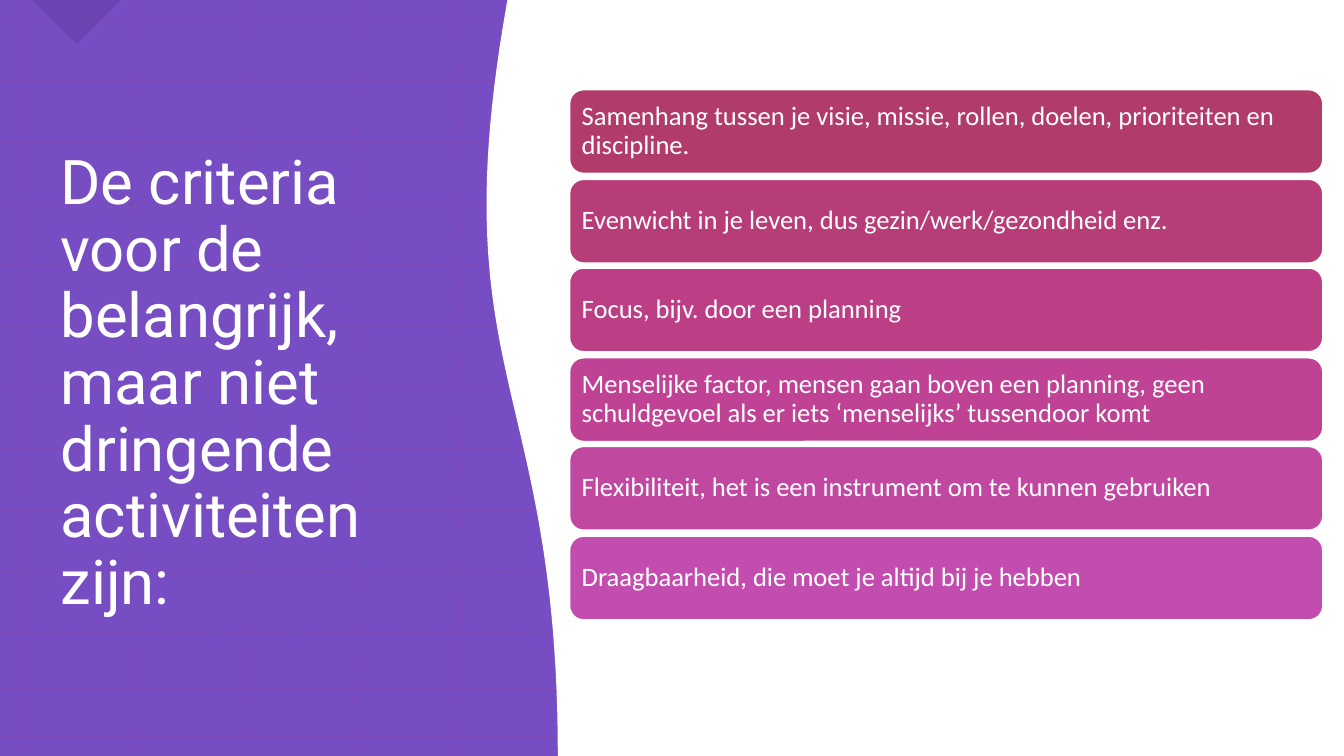
from dataclasses import dataclass
from typing import Any, NamedTuple

from lxml import etree
from pptx import Presentation
from pptx.dml.color import RGBColor
from pptx.enum.dml import MSO_LINE
from pptx.enum.shapes import MSO_CONNECTOR, MSO_SHAPE
from pptx.enum.text import MSO_ANCHOR, MSO_AUTO_SIZE, PP_ALIGN
from pptx.oxml.ns import qn
from pptx.util import Emu, Pt

RECTANGLE, ROUNDED = MSO_SHAPE.RECTANGLE, MSO_SHAPE.ROUNDED_RECTANGLE
RIGHT_TRIANGLE = MSO_SHAPE.RIGHT_TRIANGLE
STRAIGHT = MSO_CONNECTOR.STRAIGHT
DOTTED = MSO_LINE.ROUND_DOT
MIDDLE, LEFT = MSO_ANCHOR.MIDDLE, PP_ALIGN.LEFT
NO_AUTOFIT = MSO_AUTO_SIZE.NONE

EMU_PER_PX = 9144  # 100 px to the inch
SLIDE_W, SLIDE_H = 1333, 750


@dataclass(frozen=True)
class Theme:
    purple: str = "764DC3"
    dark_purple: str = "3A2266"
    grid: str = "B13B6A"
    white: str = "FFFFFF"
    title_font: str = "Roboto"
    body_font: str = "Calibri"
    title_size: int = 44
    body_size: int = 19
    grid_width: float = 1.5
    outline_width: float = 1
    line_spacing: float = 0.9


THEME = Theme()


class Box(NamedTuple):
    left: int
    top: int
    width: int
    height: int


class Point(NamedTuple):
    x: float
    y: float


class GridLine(NamedTuple):
    start: Point
    end: Point


@dataclass(frozen=True)
class Criterion:
    text: str
    fill: str


CRITERIA = [
    Criterion("Samenhang tussen je visie, missie, rollen, doelen, prioriteiten en discipline.", "B13B6A"),
    Criterion("Evenwicht in je leven, dus gezin/werk/gezondheid enz.", "B63D78"),
    Criterion("Focus, bijv. door een planning", "BC3F86"),
    Criterion("Menselijke factor, mensen gaan boven een planning, geen schuldgevoel "
              "als er iets ‘menselijks’ tussendoor komt", "C04294"),
    Criterion("Flexibiliteit, het is een instrument om te kunnen gebruiken", "C148A1"),
    Criterion("Draagbaarheid, die moet je altijd bij je hebben", "C34DAE"),
]
FIRST_CARD = Box(565, 89, 747, 83)
CARD_PITCH = 88.6

COLUMNS = [21 + round(109.3 * i) for i in range(5)]
ROWS = [19 + round(60.9 * i) for i in range(11)] + [683, 731]
GRID = [GridLine(Point(x, 0), Point(x, SLIDE_H)) for x in COLUMNS]
GRID += [GridLine(Point(0, y), Point(SLIDE_W, y)) for y in ROWS]

WAVE_EDGE = [Point(554, 750), Point(554, 376), Point(437, 374), Point(504, 0)]
WAVE_STEPS = 48


def px(length: float) -> Emu:
    return Emu(round(length * EMU_PER_PX))


def rgb(color: str) -> RGBColor:
    return RGBColor.from_string(color)


def apply_format(target: Any, values: dict[str, Any]) -> None:
    for name, value in values.items():
        setattr(target, name, value)


def set_opacity(drawn: Any, percent: int) -> None:
    """Make the first solid colour of a shape or connector translucent."""
    color = next(drawn.element.spPr.iter(qn("a:srgbClr")))
    etree.SubElement(color, qn("a:alpha"), val=str(percent * 1000))


def paint(shape: Any, fill: str, outline: str | None = None) -> None:
    shape.shadow.inherit = False
    shape.fill.solid()
    shape.fill.fore_color.rgb = rgb(fill)
    if outline is None:
        shape.line.fill.background()
    else:
        shape.line.color.rgb = rgb(outline)
        shape.line.width = Pt(THEME.outline_width)


def add_block(shapes: Any, kind: Any, box: Box, fill: str, outline: str | None = None) -> Any:
    block = shapes.add_shape(kind, *map(px, box))
    paint(block, fill, outline)
    return block


def write_text(shape: Any, text: str, font: str, size: int) -> None:
    frame = shape.text_frame
    frame.text = text
    apply_format(frame, {"word_wrap": True, "auto_size": NO_AUTOFIT, "vertical_anchor": MIDDLE})
    paragraph = frame.paragraphs[0]
    apply_format(paragraph, {"alignment": LEFT, "line_spacing": THEME.line_spacing})
    run_font = paragraph.runs[0].font
    apply_format(run_font, {"name": font, "size": Pt(size)})
    run_font.color.rgb = rgb(THEME.white)


def add_grid_line(shapes: Any, grid_line: GridLine) -> None:
    connector = shapes.add_connector(STRAIGHT, *map(px, grid_line.start + grid_line.end))
    connector.line.color.rgb = rgb(THEME.grid)
    apply_format(connector.line, {"width": Pt(THEME.grid_width), "dash_style": DOTTED})
    set_opacity(connector, 20)
    etree.SubElement(connector.element.spPr, qn("a:effectLst"))


def bezier(controls: list[Point], t: float) -> Point:
    u = 1 - t
    weights = (u ** 3, 3 * u * u * t, 3 * u * t * t, t ** 3)
    return Point(sum(w * p.x for w, p in zip(weights, controls)),
                 sum(w * p.y for w, p in zip(weights, controls)))


def add_wave(shapes: Any) -> None:
    """Cover the right side with white, bounded on the left by the curved edge."""
    edge = [bezier(WAVE_EDGE, i / WAVE_STEPS) for i in range(WAVE_STEPS + 1)]
    outline = [(px(p.x), px(p.y)) for p in [Point(SLIDE_W, SLIDE_H), *edge]]
    builder = shapes.build_freeform(px(SLIDE_W), 0)
    builder.add_line_segments(outline, close=True)
    paint(builder.convert_to_shape(), THEME.white, THEME.white)


def place_title(slide: Any) -> None:
    title = slide.shapes.title
    box = Box(50, 79, 408, 605)
    apply_format(title, dict(zip(Box._fields, map(px, box))))
    write_text(title, "De criteria voor de belangrijk, maar niet dringende activiteiten zijn:",
               THEME.title_font, THEME.title_size)
    title.element.getparent().append(title.element)  # in front of the panel


def add_card(shapes: Any, position: int, criterion: Criterion) -> None:
    box = FIRST_CARD._replace(top=FIRST_CARD.top + round(CARD_PITCH * position))
    card = add_block(shapes, ROUNDED, box, criterion.fill, THEME.white)
    write_text(card, criterion.text, THEME.body_font, THEME.body_size)
    margins = ("margin_left", "margin_top", "margin_right", "margin_bottom")
    apply_format(card.text_frame, dict.fromkeys(margins, px(8)))


def main() -> None:
    presentation = Presentation()
    apply_format(presentation, {"slide_width": px(SLIDE_W), "slide_height": px(SLIDE_H)})
    slide = presentation.slides.add_slide(presentation.slide_layouts[5])
    shapes = slide.shapes

    add_block(shapes, RECTANGLE, Box(0, 0, SLIDE_W, SLIDE_H), THEME.purple)
    pointer = add_block(shapes, RIGHT_TRIANGLE, Box(45, -31, 62, 62), THEME.dark_purple)
    pointer.rotation = 315
    set_opacity(pointer, 17)
    for grid_line in GRID:
        add_grid_line(shapes, grid_line)
    place_title(slide)
    add_wave(shapes)
    for position, criterion in enumerate(CRITERIA):
        add_card(shapes, position, criterion)

    presentation.save("out.pptx")


if __name__ == "__main__":
    main()
